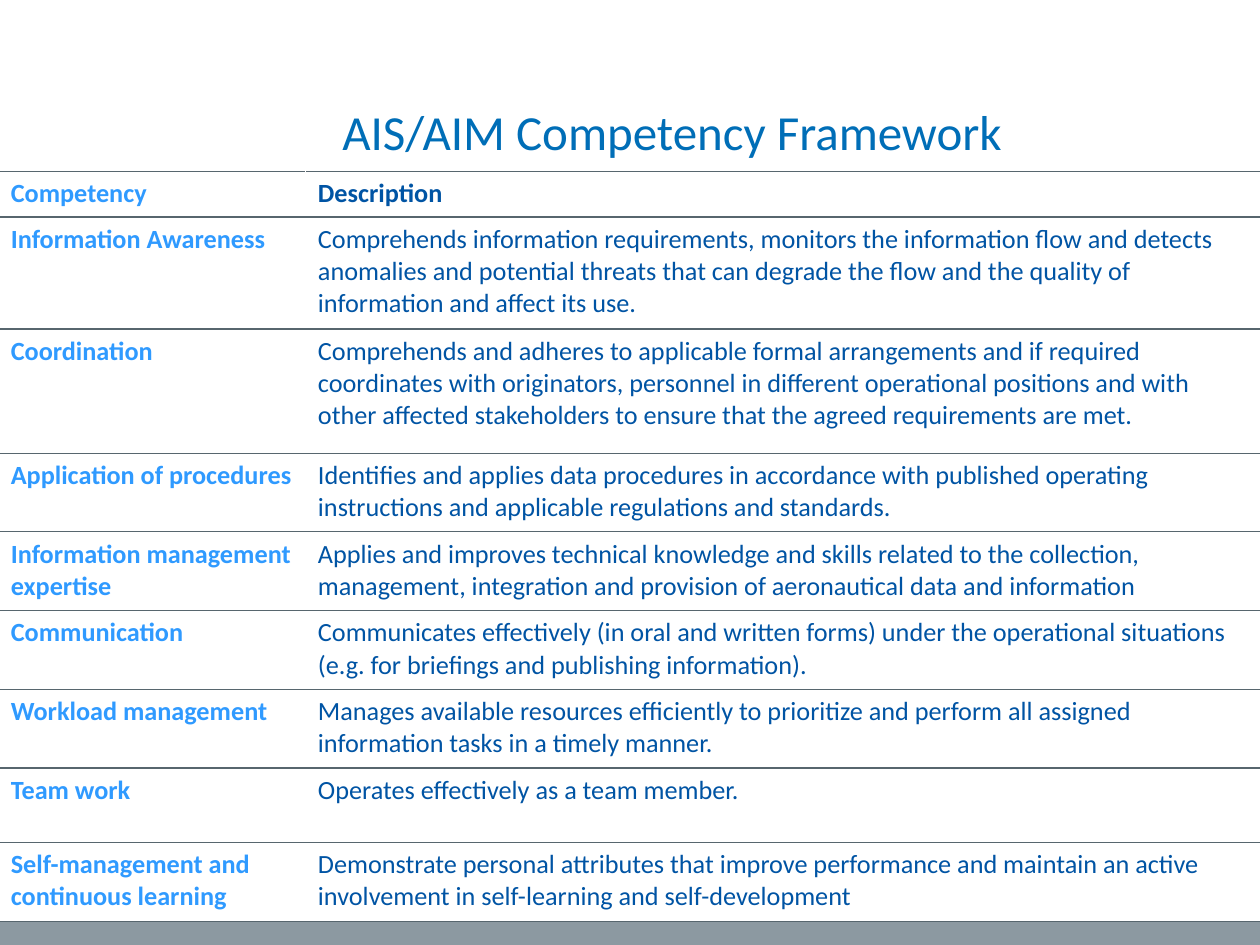
from lxml import etree
from pptx import Presentation
from pptx.dml.color import RGBColor
from pptx.enum.shapes import MSO_SHAPE
from pptx.enum.text import MSO_ANCHOR, PP_ALIGN
from pptx.oxml.ns import qn
from pptx.util import Pt

RECTANGLE = MSO_SHAPE.RECTANGLE
TOP = MSO_ANCHOR.TOP
CENTER = PP_ALIGN.CENTER

WHITE = RGBColor(0xFF, 0xFF, 0xFF)
GREY = RGBColor(0x8C, 0x99, 0xA1)
SLATE = RGBColor(0x57, 0x66, 0x6E)
TITLE_BLUE = RGBColor(0x00, 0x6E, 0xB7)
LIGHT_BLUE = RGBColor(0x2F, 0x9A, 0xFF)
DARK_BLUE = RGBColor(0x00, 0x54, 0xA4)

FONT = "Calibri"
COLUMN_WIDTHS = (175.5, 547.5)
ROWS = [
    (26, "Competency", "Description"),
    (64, "Information Awareness",
     "Comprehends information requirements, monitors the information flow and detects "
     "anomalies and potential threats that can degrade the flow and the quality of "
     "information and affect its use."),
    (71, "Coordination",
     "Comprehends and adheres to applicable formal arrangements and if required "
     "coordinates with originators, personnel in different operational positions and with "
     "other affected stakeholders to ensure that the agreed requirements are met."),
    (45, "Application of procedures",
     "Identifies and applies data procedures in accordance with published operating "
     "instructions and applicable regulations and standards."),
    (45, "Information management expertise",
     "Applies and improves technical knowledge and skills related to the collection, "
     "management, integration and provision of aeronautical data and information"),
    (45, "Communication",
     "Communicates effectively (in oral and written forms) under the operational situations "
     "(e.g. for briefings and publishing information)."),
    (45, "Workload management",
     "Manages available resources efficiently to prioritize and perform all assigned "
     "information tasks in a timely manner."),
    (42.5, "Team work", "Operates effectively as a team member."),
    (45, "Self-management and continuous learning",
     "Demonstrate personal attributes that improve performance and maintain an active "
     "involvement in self-learning and self-development"),
]


def format_text(frame, size, color, bold=False):
    for para in frame.paragraphs:
        for span in para.runs:
            span.font.name = FONT
            span.font.size = Pt(size)
            span.font.bold = bold
            span.font.color.rgb = color


def add_footer_bar(page):
    bar = page.shapes.add_shape(RECTANGLE, Pt(0), Pt(514), Pt(720), Pt(26))
    bar.shadow.inherit = False
    bar.fill.solid()
    bar.fill.fore_color.rgb = GREY
    bar.line.fill.background()


def add_title(page, text):
    box = page.shapes.add_textbox(Pt(60), Pt(54.5), Pt(648), Pt(68))
    frame = box.text_frame
    frame.word_wrap = True
    frame.vertical_anchor = TOP
    frame.text = text
    frame.paragraphs[0].alignment = CENTER
    format_text(frame, 28, TITLE_BLUE)


def add_borders(cell, sides):
    properties = cell._tc.get_or_add_tcPr()
    for position, side in enumerate(sides):
        line = etree.Element(qn(f"a:ln{side}"), w=str(Pt(0.75)))
        fill = etree.SubElement(line, qn("a:solidFill"))
        etree.SubElement(fill, qn("a:srgbClr"), val=str(SLATE))
        properties.insert(position, line)


def fill_cell(cell, text, color, bold, sides):
    cell.text = text
    cell.fill.solid()
    cell.fill.fore_color.rgb = WHITE
    format_text(cell.text_frame, 15, color, bold)
    add_borders(cell, sides)


def add_competency_table(page):
    height = sum(row[0] for row in ROWS)
    frame = page.shapes.add_table(len(ROWS), 2, Pt(-1), Pt(98),
                                  Pt(sum(COLUMN_WIDTHS)), Pt(height))
    table = frame.table
    for column, width in zip(table.columns, COLUMN_WIDTHS):
        column.width = Pt(width)
    for index, (row_height, competency, description) in enumerate(ROWS):
        table.rows[index].height = Pt(row_height)
        fill_cell(table.cell(index, 0), competency, LIGHT_BLUE, True, "LTB")
        fill_cell(table.cell(index, 1), description, DARK_BLUE, index == 0, "RTB")


def main():
    deck = Presentation()
    deck.slide_width = Pt(720)
    deck.slide_height = Pt(540)
    page = deck.slides.add_slide(deck.slide_layouts[6])
    add_footer_bar(page)
    add_competency_table(page)
    add_title(page, "AIS/AIM Competency Framework")
    deck.save("out.pptx")


if __name__ == "__main__":
    main()
